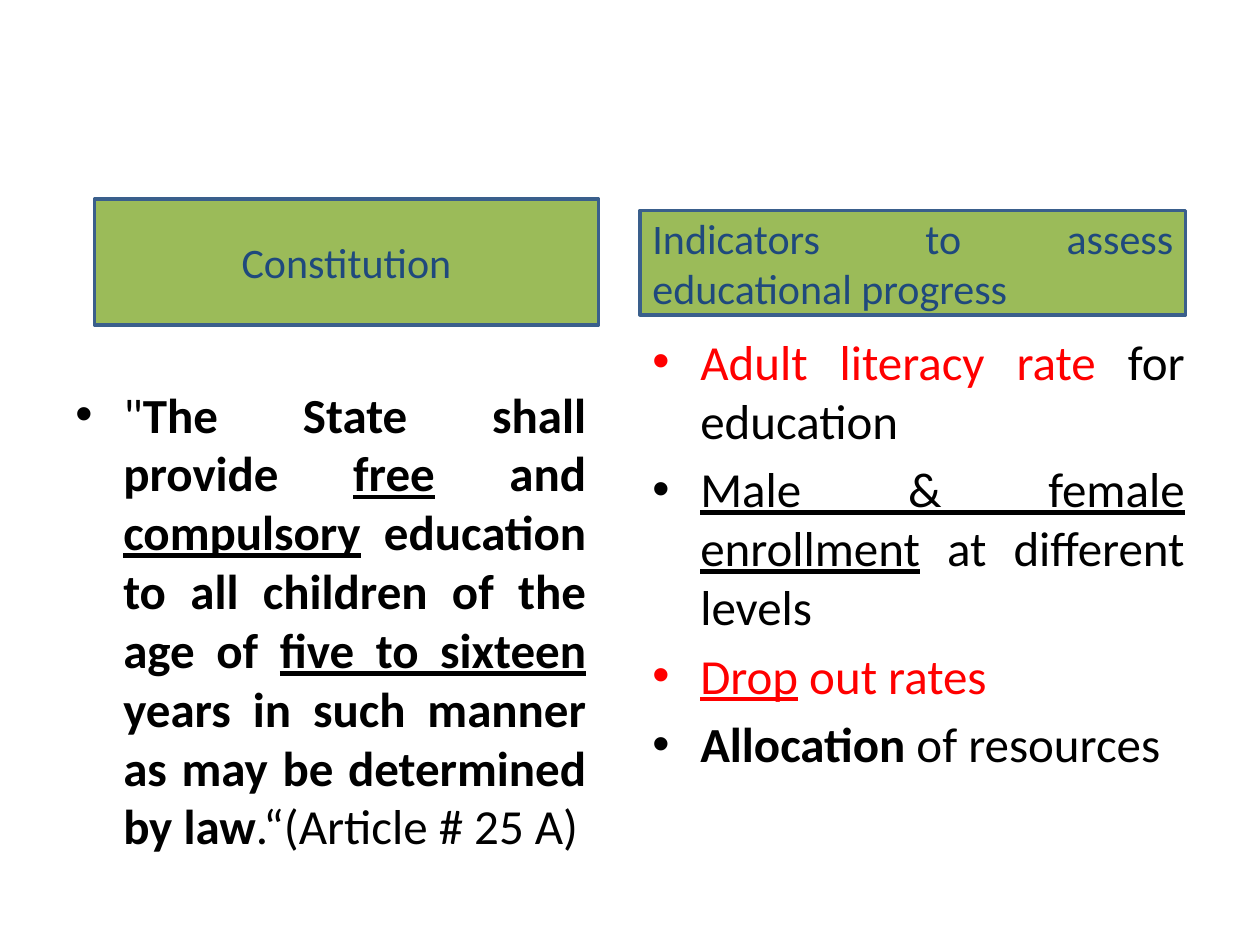
from lxml.etree import SubElement
from pptx import Presentation
from pptx.dml.color import RGBColor
from pptx.enum.shapes import MSO_SHAPE
from pptx.enum.text import MSO_ANCHOR, PP_ALIGN
from pptx.oxml.ns import qn
from pptx.util import Inches, Pt

BLACK, RED, NAVY = "000000", "FF0000", "1F497D"
GREEN, BORDER = "9BBB59", "3A5F8C"


def color(hex_value):
    return RGBColor.from_string(hex_value)


def add_run(paragraph, text, size, text_color, style=""):
    """Add a run; style may hold b for bold and u for underlined."""
    run = paragraph.add_run()
    run.text = text
    run.font.name = "Calibri"
    run.font.size = Pt(size)
    run.font.color.rgb = color(text_color)
    run.font.bold = "b" in style
    run.font.underline = "u" in style


presentation = Presentation()
presentation.slide_width = Inches(10)
presentation.slide_height = Inches(7.5)
slide = presentation.slides.add_slide(presentation.slide_layouts[6])

constitution = [
    [
        ('"', BLACK, ""),
        ("The State shall provide ", BLACK, "b"),
        ("free", BLACK, "bu"),
        (" and ", BLACK, "b"),
        ("compulsory", BLACK, "bu"),
        (" education to all children of the age of ", BLACK, "b"),
        ("five to sixteen ", BLACK, "bu"),
        ("years in such manner as may be determined by law", BLACK, "b"),
        (".“(Article # 25 A)", BLACK, ""),
    ],
]
indicators = [
    [("Adult literacy rate ", RED, ""), ("for education", BLACK, "")],
    [("Male & female enrollment", BLACK, "u"), (" at different levels", BLACK, "")],
    [("Drop", RED, "u"), (" out rates ", RED, "")],
    [("Allocation", BLACK, "b"), (" of resources", BLACK, "")],
]

# Bulleted columns
for left, top, width, height, bullets in [
    (0.5, 3, 4.25, 4, constitution),
    (5.08, 2.58, 4.42, 4.12, indicators),
]:
    text_box = slide.shapes.add_textbox(
        Inches(left), Inches(top), Inches(width), Inches(height))
    text_frame = text_box.text_frame
    text_frame.word_wrap = True
    for index, runs in enumerate(bullets):
        paragraph = text_frame.add_paragraph() if index else text_frame.paragraphs[0]
        paragraph.alignment = PP_ALIGN.JUSTIFY
        if index:
            paragraph.space_before = Pt(5.6)
        properties = paragraph._p.get_or_add_pPr()
        properties.set("marL", str(Inches(0.38)))
        properties.set("indent", str(Inches(-0.38)))
        SubElement(properties, qn("a:buFont")).set("typeface", "Arial")
        SubElement(properties, qn("a:buChar")).set("char", "•")
        for text, text_color, style in runs:
            add_run(paragraph, text, 28, text_color, style)

# Column headings
for left, top, width, height, alignment, heading in [
    (0.75, 1.58, 4, 1, PP_ALIGN.CENTER, "Constitution"),
    (5.08, 1.67, 4.33, 0.83, PP_ALIGN.JUSTIFY,
     "Indicators to assess educational progress"),
]:
    shape = slide.shapes.add_shape(
        MSO_SHAPE.RECTANGLE, Inches(left), Inches(top), Inches(width), Inches(height))
    shape.shadow.inherit = False
    shape.fill.solid()
    shape.fill.fore_color.rgb = color(GREEN)
    shape.line.color.rgb = color(BORDER)
    shape.line.width = Pt(2)
    shape.text_frame.word_wrap = True
    shape.text_frame.vertical_anchor = MSO_ANCHOR.MIDDLE
    paragraph = shape.text_frame.paragraphs[0]
    paragraph.alignment = alignment
    add_run(paragraph, heading, 24, NAVY)

presentation.save("out.pptx")
